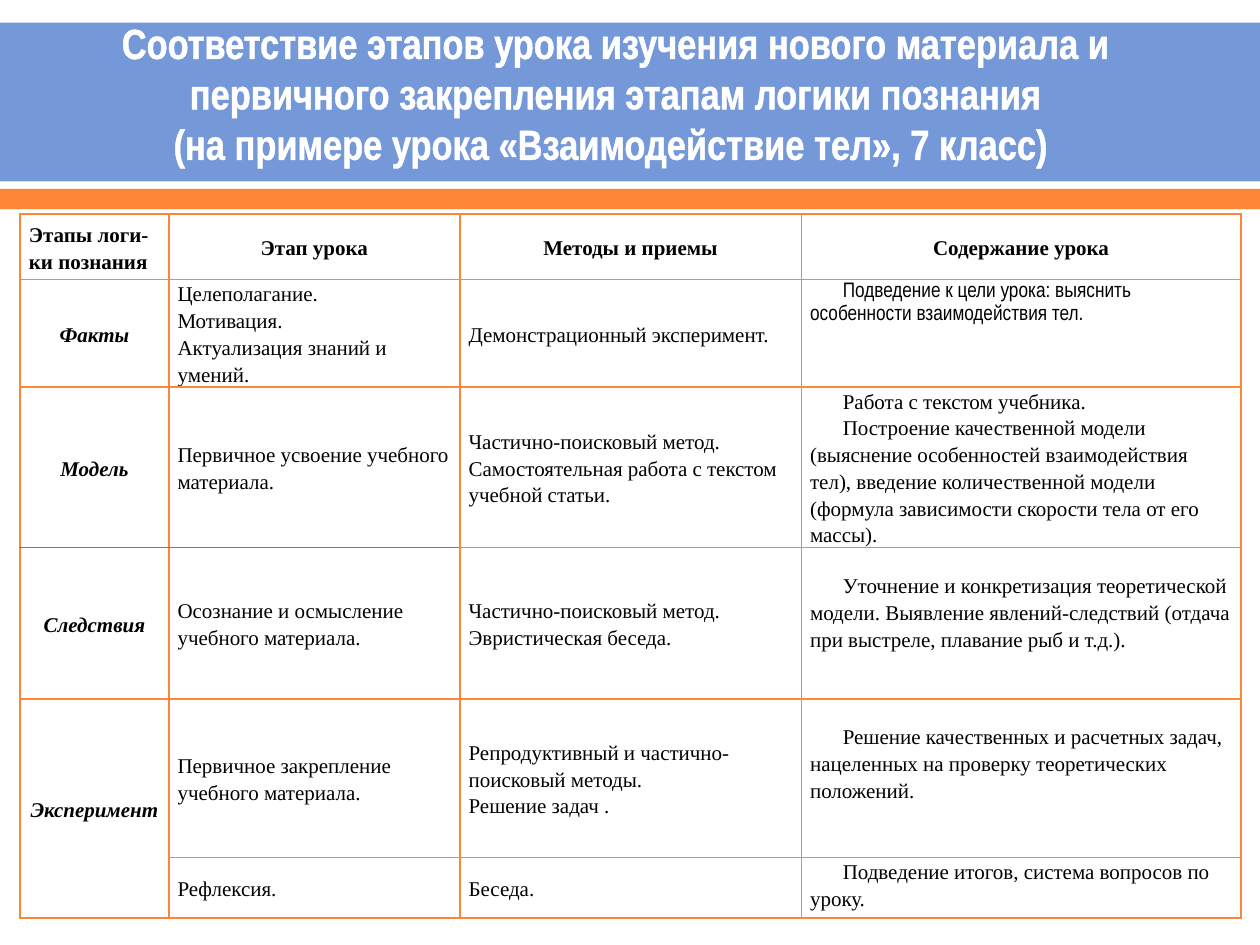
from lxml.etree import SubElement
from pptx import Presentation
from pptx.dml.color import RGBColor
from pptx.enum.shapes import MSO_SHAPE
from pptx.enum.text import MSO_ANCHOR, MSO_AUTO_SIZE, PP_ALIGN
from pptx.oxml.ns import qn
from pptx.util import Inches, Pt

# Content
TITLE = ("Соответствие этапов урока изучения нового материала и первичного "
         "закрепления этапам логики познания\v"
         "(на примере урока «Взаимодействие тел», 7 класс) ")
HEADERS = ["Этапы логи-ки познания", "Этап урока", "Методы и приемы", "Содержание урока"]
ROWS = [
    ("Факты",
     "Целеполагание.\nМотивация.\nАктуализация знаний и умений.",
     "Демонстрационный эксперимент.",
     "Подведение к цели урока: выяснить особенности взаимодействия тел."),
    ("Модель",
     "Первичное усвоение учебного материала.",
     "Частично-поисковый метод.\nСамостоятельная работа с текстом учебной статьи.",
     "Работа с текстом учебника.\nПостроение качественной модели (выяснение особенностей "
     "взаимодействия тел), введение количественной модели (формула зависимости скорости "
     "тела от его массы)."),
    ("Следствия",
     "Осознание и осмысление учебного материала.",
     "Частично-поисковый метод.\nЭвристическая беседа.",
     "Уточнение и конкретизация теоретической модели. Выявление явлений-следствий "
     "(отдача при выстреле, плавание рыб и т.д.)."),
    ("Эксперимент",
     "Первичное закрепление учебного материала.",
     "Репродуктивный и частично-поисковый методы.\nРешение задач .",
     "Решение качественных и расчетных задач, нацеленных на проверку теоретических "
     "положений."),
    ("", "Рефлексия.", "Беседа.", "Подведение итогов, система вопросов по уроку."),
]
COLUMN_WIDTHS = [1.18, 2.31, 2.71, 3.49]
ROW_HEIGHTS = [0.52, 0.82, 1.18, 1.2, 1.26, 0.48]
LOWERED_ROWS = (3, 4)  # the lesson content starts one line lower here
CONTENT_COLUMN = 3

THEME = {
    "band": "7598D9", "stripe": "FE8637", "border": "FE8637", "dark_border": "E75C01",
    "title": "FFFFFF", "text": "000000",
    "title_font": "Arial Narrow", "body_font": "Times New Roman",
    "title_size": 24, "body_size": 12, "line_spacing": 1.15,
}


def color(name):
    return RGBColor.from_string(THEME[name])


def style_font(font, family, size, color_name, bold=None, italic=None):
    font.name, font.size = THEME[family], Pt(THEME[size])
    font.bold, font.italic = bold, italic
    font.color.rgb = color(color_name)


def add_solid_fill(parent, color_name):
    fill = SubElement(parent, qn("a:solidFill"))
    SubElement(fill, qn("a:srgbClr"), val=THEME[color_name])


def add_bar(slide, top, height, color_name):
    bar = slide.shapes.add_shape(MSO_SHAPE.RECTANGLE, 0, Inches(top), Inches(10), Inches(height))
    bar.shadow.inherit = False
    bar.fill.solid()
    bar.fill.fore_color.rgb = color(color_name)
    bar.line.fill.background()


def add_title(slide):
    title = slide.shapes.title
    title.left, title.top, title.width, title.height = map(Inches, (0.2, 0.36, 9.37, 0.75))
    frame = title.text_frame
    frame.text = TITLE
    frame.word_wrap = True
    frame.auto_size = MSO_AUTO_SIZE.NONE
    frame.vertical_anchor = MSO_ANCHOR.MIDDLE
    paragraph = frame.paragraphs[0]
    paragraph.alignment = PP_ALIGN.CENTER
    for run in paragraph.runs:
        style_font(run.font, "title_font", "title_size", "title", bold=True)
        outline = SubElement(run.font._element, qn("a:ln"), w=str(Pt(1.1)))
        add_solid_fill(outline, "title")
        run.font._element.insert(0, outline)
    slide.shapes._spTree.append(title._element)  # above the bars


def set_borders(cell, row, column):
    properties = cell._tc.get_or_add_tcPr()
    dark_side = {2: "lnB", 3: "lnT"}.get(row) if column < 2 else None
    for position, side in enumerate(("lnL", "lnR", "lnT", "lnB")):
        line = SubElement(properties, qn("a:" + side), w=str(Pt(1)))
        add_solid_fill(line, "dark_border" if side == dark_side else "border")
        properties.insert(position, line)


def fill_cell(cell, text, row, column):
    header, stage = row == 0, row > 0 and column == 0
    content = row > 0 and column == CONTENT_COLUMN
    cell.fill.background()
    set_borders(cell, row, column)
    cell.margin_left = cell.margin_right = Inches(0.07)
    cell.margin_top = Inches(0.19 if content and row in LOWERED_ROWS else 0)
    cell.margin_bottom = 0
    cell.vertical_anchor = MSO_ANCHOR.TOP if content else MSO_ANCHOR.MIDDLE
    cell.text_frame.text = text
    family = "title_font" if content and row == 1 else "body_font"
    centered = stage or (header and column > 0)
    for paragraph in cell.text_frame.paragraphs:
        paragraph.alignment = PP_ALIGN.CENTER if centered else PP_ALIGN.LEFT
        paragraph.line_spacing = THEME["line_spacing"]
        if content:
            paragraph._p.get_or_add_pPr().set("indent", str(Inches(0.26)))
        style_font(paragraph.font, family, "body_size", "text")
        for run in paragraph.runs:
            style_font(run.font, family, "body_size", "text", header or stage, stage)


def add_stage_table(slide):
    rows = [HEADERS, *ROWS]
    table = slide.shapes.add_table(
        len(rows), len(HEADERS), Inches(0.16), Inches(1.7),
        Inches(sum(COLUMN_WIDTHS)), Inches(sum(ROW_HEIGHTS))).table
    table.first_row = table.horz_banding = False
    for column, width in zip(table.columns, COLUMN_WIDTHS):
        column.width = Inches(width)
    for row, height in zip(table.rows, ROW_HEIGHTS):
        row.height = Inches(height)
    for row, texts in enumerate(rows):
        for column, text in enumerate(texts):
            fill_cell(table.cell(row, column), text, row, column)
    # The experiment stage covers the last two rows
    table.cell(4, 0).merge(table.cell(5, 0))


def main():
    presentation = Presentation()
    presentation.slide_width, presentation.slide_height = Inches(10), Inches(7.5)
    slide = presentation.slides.add_slide(presentation.slide_layouts[5])
    add_bar(slide, 0.18, 1.26, "band")
    add_bar(slide, 1.5, 0.16, "stripe")
    add_title(slide)
    add_stage_table(slide)
    presentation.save("out.pptx")


if __name__ == "__main__":
    main()
